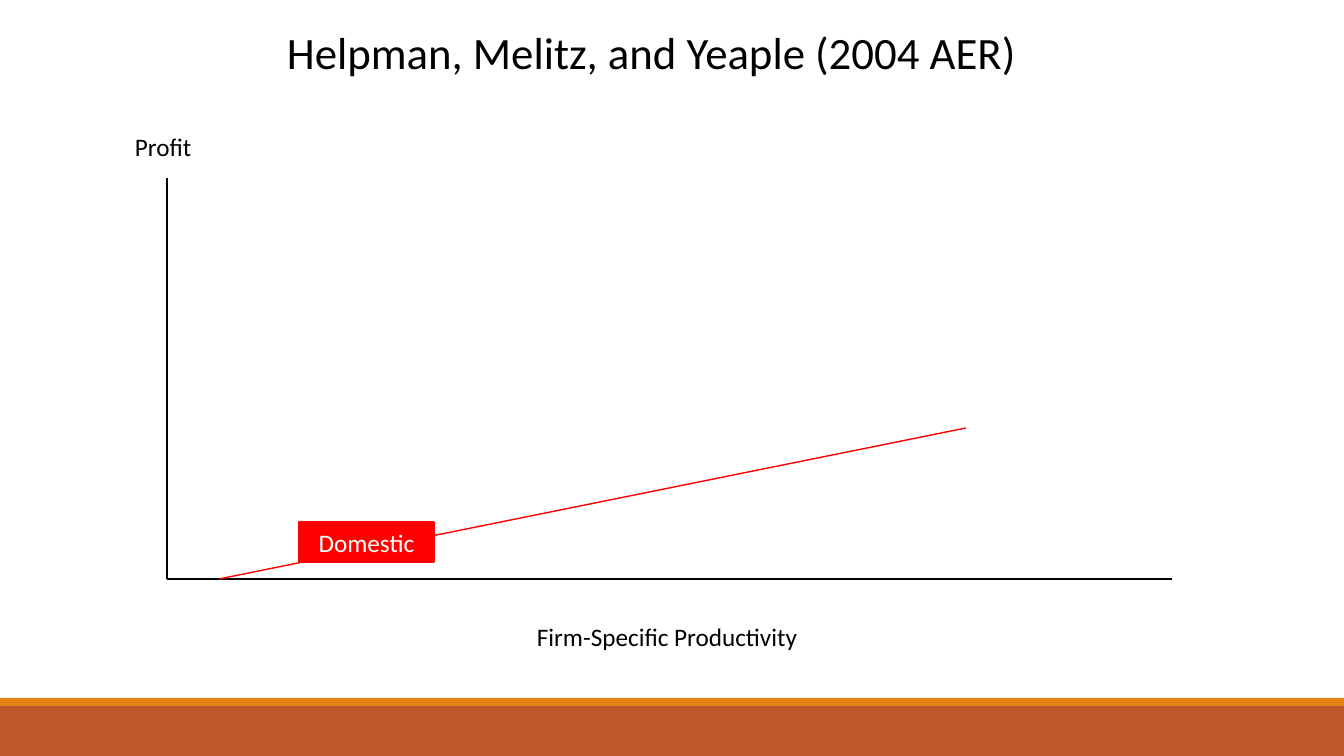
from dataclasses import dataclass

from pptx import Presentation
from pptx.dml.color import RGBColor
from pptx.enum.shapes import MSO_CONNECTOR as CONNECTOR, MSO_SHAPE as SHAPE
from pptx.enum.text import MSO_ANCHOR as ANCHOR, PP_ALIGN as ALIGN
from pptx.oxml.ns import qn
from pptx.util import Pt
from lxml import etree


@dataclass(frozen=True)
class Theme:
    font: str = "Calibri"
    title_size: int = 32
    label_size: int = 18
    line_width: float = 1
    box_line_width: float = 1.25
    ink: str = "000000"
    paper: str = "FFFFFF"
    domestic: str = "FF0000"
    accent: str = "E48312"
    footer: str = "BD582C"


THEME = Theme()
EMU_PER_PX = 914400 / 100.8
WIDTH, HEIGHT = 1344, 756

# Footer bands, stacked upwards from the bottom edge: colour, height
BANDS = [(THEME.footer, 50), (THEME.accent, 8)]

# Text, box (left, top, width, height), type size
LABELS = [
    ("Helpman, Melitz, and Yeaple (2004 AER)", (277, 20, 786, 65), THEME.title_size),
    ("Profit", (125, 126, 84, 40), THEME.label_size),
    ("Firm-Specific Productivity", (527, 616, 285, 40), THEME.label_size),
]

ORIGIN = (167, 579)
PROFIT_TOP = 178
PRODUCTIVITY_END = 1172
CUTOFF = 219
DOMESTIC_END = (966, 428)
DOMESTIC_TAG = ("Domestic", (299, 522, 135, 40))


def px(length):
    return round(length * EMU_PER_PX)


def rgb(colour):
    return RGBColor.from_string(colour)


def add_box(slide, box, fill, outline=None):
    shape = slide.shapes.add_shape(SHAPE.RECTANGLE, *map(px, box))
    shape.shadow.inherit = False
    shape.fill.solid()
    shape.fill.fore_color.rgb = rgb(fill)
    if outline:
        shape.line.color.rgb = rgb(outline)
        shape.line.width = Pt(THEME.box_line_width)
    else:
        shape.line.fill.background()
    return shape


def write(shape, text, size, colour, align=ALIGN.LEFT):
    frame = shape.text_frame
    frame.word_wrap = True
    frame.vertical_anchor = ANCHOR.TOP
    paragraph = frame.paragraphs[0]
    paragraph.alignment = align
    run = paragraph.add_run()
    run.text = text
    run.font.name = THEME.font
    run.font.size = Pt(size)
    run.font.color.rgb = rgb(colour)


def add_line(slide, start, end, colour):
    line = slide.shapes.add_connector(CONNECTOR.STRAIGHT, *map(px, start + end))
    line.line.color.rgb = rgb(colour)
    line.line.width = Pt(THEME.line_width)
    etree.SubElement(line._element.spPr, qn("a:effectLst"))


def main():
    deck = Presentation()
    deck.slide_width, deck.slide_height = px(WIDTH), px(HEIGHT)
    slide = deck.slides.add_slide(deck.slide_layouts[6])
    slide.background.fill.solid()
    slide.background.fill.fore_color.rgb = rgb(THEME.paper)

    band_top = HEIGHT
    for colour, height in BANDS:
        band_top -= height
        add_box(slide, (0, band_top, WIDTH, height), colour)

    origin_x, origin_y = ORIGIN
    add_line(slide, (origin_x, PROFIT_TOP), ORIGIN, THEME.ink)
    add_line(slide, ORIGIN, (PRODUCTIVITY_END, origin_y), THEME.ink)
    add_line(slide, (CUTOFF, origin_y), DOMESTIC_END, THEME.domestic)

    tag_text, tag_box = DOMESTIC_TAG
    tag = add_box(slide, tag_box, THEME.domestic, THEME.domestic)
    write(tag, tag_text, THEME.label_size, THEME.paper, ALIGN.CENTER)

    for text, box, size in LABELS:
        label = slide.shapes.add_textbox(*map(px, box))
        write(label, text, size, THEME.ink)

    deck.save("out.pptx")


if __name__ == "__main__":
    main()
